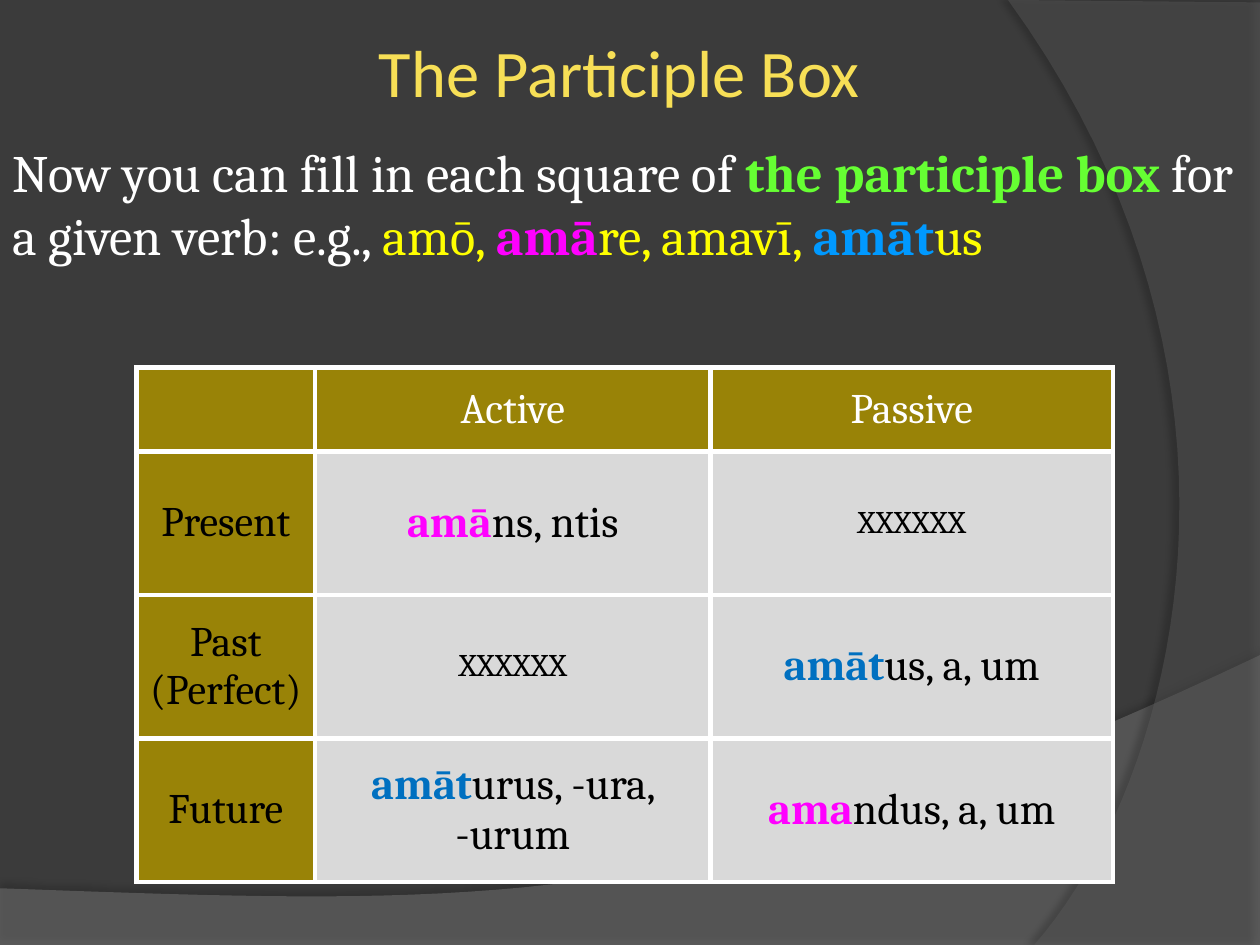
"""Build a slide showing the participle box of a Latin verb."""
from lxml import etree
from pptx import Presentation
from pptx.dml.color import RGBColor
from pptx.enum.text import MSO_ANCHOR, PP_ALIGN
from pptx.oxml.ns import qn
from pptx.util import Pt

CENTER, LEFT = PP_ALIGN.CENTER, PP_ALIGN.LEFT
MIDDLE, TOP = MSO_ANCHOR.MIDDLE, MSO_ANCHOR.TOP

BACKGROUND = RGBColor(0x3B, 0x3B, 0x3B)
WAVE_GRAY = RGBColor(0x7F, 0x7F, 0x7F)
ARC_GRAY = RGBColor(0x5E, 0x5E, 0x5E)
CELL_GRAY = RGBColor(0xD9, 0xD9, 0xD9)
GOLD = RGBColor(0xF7, 0xDF, 0x56)
OLIVE = RGBColor(0x99, 0x83, 0x07)
WHITE = RGBColor(0xFF, 0xFF, 0xFF)
BLACK = RGBColor(0x00, 0x00, 0x00)
GREEN = RGBColor(0x66, 0xFF, 0x33)
YELLOW = RGBColor(0xFF, 0xFF, 0x00)
MAGENTA = RGBColor(0xFF, 0x00, 0xFF)
SKY = RGBColor(0x00, 0x99, 0xFF)
BLUE = RGBColor(0x00, 0x70, 0xC0)

BODY = [
    ("Now you can fill in each square of ", WHITE, False),
    ("the participle box ", GREEN, True),
    ("for a given verb: e.g., ", WHITE, False),
    ("amō, ", YELLOW, False),
    ("amā", MAGENTA, True),
    ("re, amavī, ", YELLOW, False),
    ("amāt", SKY, True),
    ("us", YELLOW, False),
]


def heading(text, color=BLACK):
    return OLIVE, 24, [(text, color, False)]


def form(stem, color, ending):
    return CELL_GRAY, 25, [(stem, color, True), (ending, BLACK, False)]


EMPTY_CORNER = (OLIVE, 24, [])
NO_FORM = (CELL_GRAY, 18, [("XXXXXX", BLACK, False)])
PARTICIPLES = [
    [EMPTY_CORNER, heading("Active", WHITE), heading("Passive", WHITE)],
    [heading("Present"), form("amā", MAGENTA, "ns, ntis"), NO_FORM],
    [heading("Past (Perfect)"), NO_FORM, form("amāt", BLUE, "us, a, um")],
    [heading("Future"), form("amāt", BLUE, "urus, -ura, -urum"),
     form("ama", MAGENTA, "ndus, a, um")],
]


def curve(start, control_1, control_2, end, steps=40):
    points = []
    for step in range(1, steps + 1):
        t = step / steps
        weights = ((1 - t) ** 3, 3 * t * (1 - t) ** 2, 3 * t * t * (1 - t), t ** 3)
        points.append(tuple(
            sum(weight * value for weight, value in zip(weights, values))
            for values in zip(start, control_1, control_2, end)))
    return points


class SlideBuilder:
    def __init__(self, slide, font="Cambria"):
        self.slide = slide
        self.font = font

    def background(self, color):
        fill = self.slide.background.fill
        fill.solid()
        fill.fore_color.rgb = color

    def translucent_outline(self, points, color, opacity, shadow_opacity, distance, angle):
        vertices = [(Pt(x), Pt(y)) for x, y in points]
        builder = self.slide.shapes.build_freeform(*vertices[0], scale=1.0)
        builder.add_line_segments(vertices[1:], close=True)
        shape = builder.convert_to_shape()
        shape.fill.solid()
        shape.fill.fore_color.rgb = color
        shape.line.fill.background()
        shape.shadow.inherit = False
        properties = shape.element.spPr
        fill_color = properties.find(qn("a:solidFill"))[0]
        etree.SubElement(fill_color, qn("a:alpha"), val=str(opacity * 1000))
        shadow = etree.SubElement(
            properties.find(qn("a:effectLst")), qn("a:outerShdw"),
            blurRad=str(Pt(4)), dist=str(Pt(distance)), dir=str(angle * 60000),
            algn="ctr", rotWithShape="0")
        shadow_color = etree.SubElement(shadow, qn("a:srgbClr"), val=str(BLACK))
        etree.SubElement(shadow_color, qn("a:alpha"), val=str(shadow_opacity * 1000))

    def add_runs(self, text_frame, runs, size, alignment, font=None):
        paragraph = text_frame.paragraphs[0]
        paragraph.alignment = alignment
        for text, color, bold in runs:
            run = paragraph.add_run()
            run.text = text
            run.font.name = font or self.font
            run.font.size = Pt(size)
            run.font.bold = bold
            run.font.color.rgb = color

    def text(self, box, runs, size, alignment=LEFT, anchor=TOP, font=None):
        shape = self.slide.shapes.add_textbox(*map(Pt, box))
        text_frame = shape.text_frame
        text_frame.word_wrap = True
        text_frame.vertical_anchor = anchor
        self.add_runs(text_frame, runs, size, alignment, font)

    def table(self, left, top, widths, heights, rows):
        frame = self.slide.shapes.add_table(
            len(heights), len(widths), Pt(left), Pt(top),
            Pt(sum(widths)), Pt(sum(heights)))
        table = frame.table
        for column, width in zip(table.columns, widths):
            column.width = Pt(width)
        for row, height, contents in zip(table.rows, heights, rows):
            row.height = Pt(height)
            for cell, (color, size, runs) in zip(row.cells, contents):
                cell.fill.solid()
                cell.fill.fore_color.rgb = color
                cell.vertical_anchor = MIDDLE
                self.add_runs(cell.text_frame, runs, size, CENTER)
                self.borders(cell, WHITE, 3)

    def borders(self, cell, color, width):
        properties = cell._tc.get_or_add_tcPr()
        for index, side in enumerate(("lnL", "lnR", "lnT", "lnB")):
            border = etree.Element(qn(f"a:{side}"), w=str(Pt(width)))
            fill = etree.SubElement(border, qn("a:solidFill"))
            etree.SubElement(fill, qn("a:srgbClr"), val=str(color))
            properties.insert(index, border)


def main():
    presentation = Presentation()
    presentation.slide_width, presentation.slide_height = Pt(720), Pt(540)
    builder = SlideBuilder(presentation.slides.add_slide(presentation.slide_layouts[6]))
    builder.background(BACKGROUND)
    wave = [(0, 507.6), (0, 540.5), (720, 540.5), (720, 374.4)]
    wave += curve(wave[-1], (402.5, 525), (281.5, 517.7), wave[0])
    builder.translucent_outline(wave, WAVE_GRAY, 45, 35, 3.5, 270)
    arc = [(720, 1.4), (720, 540), (591, 540)]
    arc += curve(arc[-1], (673.2, 445.7), (733, 216), (576, 0))
    builder.translucent_outline(arc, ARC_GRAY, 40, 45, 4, 180)
    builder.text((30, 6, 648, 69), [("The Participle Box", GOLD, False)],
                 38, CENTER, MIDDLE, "Calibri")
    builder.table(78, 210, (102, 226, 230), (48, 82, 82, 82), PARTICIPLES)
    builder.text((0, 76.5, 720, 80), BODY, 30)
    presentation.save("out.pptx")


if __name__ == "__main__":
    main()
